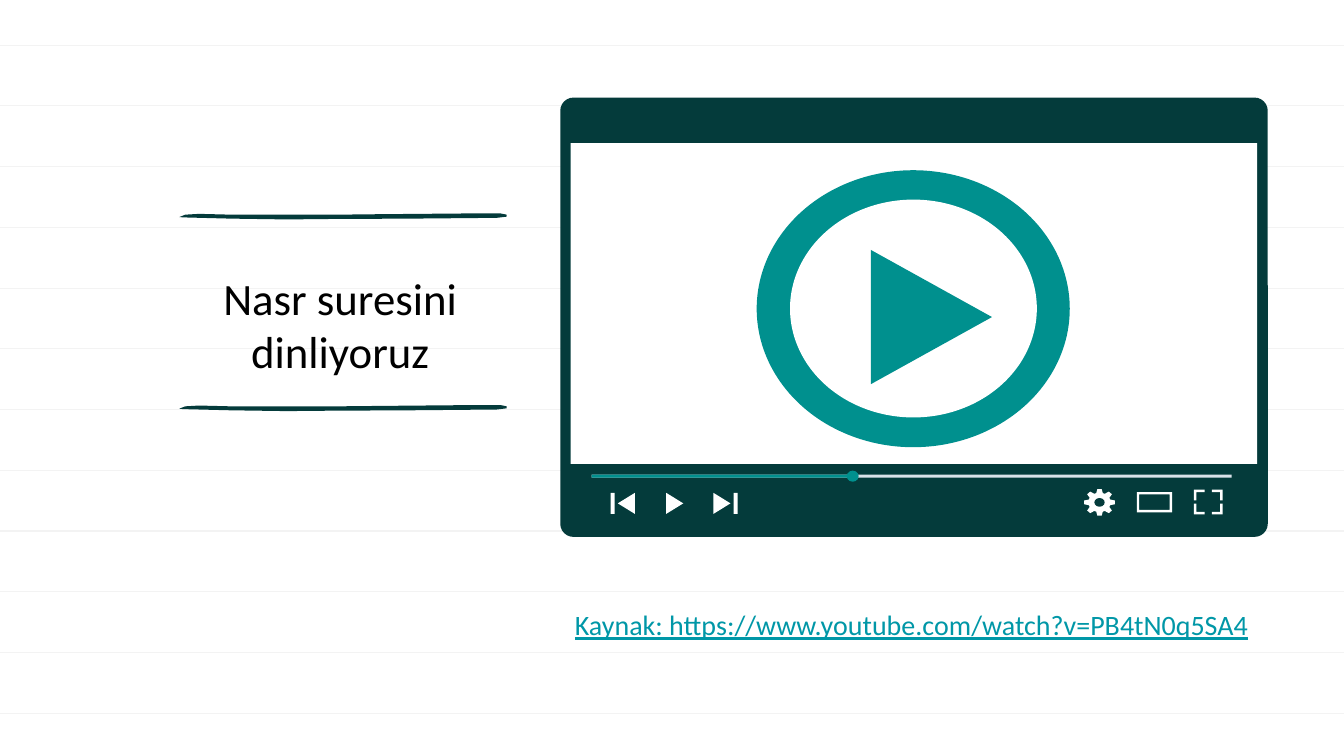
from dataclasses import dataclass
from math import cos, radians, sin

from lxml import etree
from pptx import Presentation
from pptx.dml.color import RGBColor
from pptx.enum.shapes import MSO_CONNECTOR, MSO_SHAPE
from pptx.enum.text import MSO_ANCHOR, MSO_AUTO_SIZE, PP_ALIGN
from pptx.oxml.ns import qn
from pptx.util import Cm, Pt

RECTANGLE = MSO_SHAPE.RECTANGLE
ROUNDED = MSO_SHAPE.ROUNDED_RECTANGLE
OVAL = MSO_SHAPE.OVAL
FRAME = MSO_SHAPE.FRAME
STRAIGHT = MSO_CONNECTOR.STRAIGHT
CENTER = PP_ALIGN.CENTER
TOP = MSO_ANCHOR.TOP
NO_AUTOFIT = MSO_AUTO_SIZE.NONE

TITLE_ONLY = 5
SLIDE_WIDTH, SLIDE_HEIGHT = 33.87, 19.05


@dataclass(frozen=True)
class Theme:
    font: str = "Calibri"
    title_size: int = 32
    source_size: int = 20
    text: str = "000000"
    link: str = "0097A7"
    paper_line: str = "F3F3F3"
    dark: str = "043B3B"
    accent: str = "00908E"
    track: str = "D9E2E9"
    white: str = "FFFFFF"


class SlideBuilder:
    """Draws on one slide; all positions and sizes are in centimetres."""

    def __init__(self, slide, theme):
        self.slide = slide
        self.theme = theme
        self.shapes = slide.shapes

    def start_group(self):
        group = self.slide.shapes.add_group_shape()
        self.shapes = group.shapes
        return group

    def end_group(self):
        self.shapes = self.slide.shapes

    def paint(self, shape, color):
        shape.shadow.inherit = False
        shape.fill.solid()
        shape.fill.fore_color.rgb = RGBColor.from_string(color)
        shape.line.fill.background()

    def preset(self, kind, left, top, width, height, color, adjustment=None):
        shape = self.shapes.add_shape(kind, Cm(left), Cm(top), Cm(width), Cm(height))
        if adjustment is not None:
            shape.adjustments[0] = adjustment
        self.paint(shape, color)

    def outline(self, points, color):
        """Fill the closed polygon through the given points."""
        start, *rest = [(Cm(x), Cm(y)) for x, y in points]
        builder = self.shapes.build_freeform(*start)
        builder.add_line_segments(rest, close=True)
        self.paint(builder.convert_to_shape(), color)

    def triangle(self, base, top, width, height, color):
        """Vertical base at x = base; a negative width points to the left."""
        tip = (base + width, top + height / 2)
        self.outline([(base, top), (base, top + height), tip], color)

    def horizontal_line(self, y, color):
        line = self.shapes.add_connector(STRAIGHT, 0, Cm(y), Cm(SLIDE_WIDTH), Cm(y))
        line.line.color.rgb = RGBColor.from_string(color)
        line.line.width = Pt(0.75)
        etree.SubElement(line._element.spPr, qn("a:effectLst"))

    def fill_text(self, shape, box, text, size, color, underline=False, spacing=1.0):
        shape.left, shape.top, shape.width, shape.height = map(Cm, box)
        frame = shape.text_frame
        frame.word_wrap = True
        frame.auto_size = NO_AUTOFIT
        frame.vertical_anchor = TOP
        frame.margin_left = frame.margin_right = Cm(0.33)
        frame.margin_top = frame.margin_bottom = Cm(0.33)
        paragraph = frame.paragraphs[0]
        paragraph.alignment = CENTER
        paragraph.line_spacing = spacing
        run = paragraph.add_run()
        run.text = text
        run.font.name = self.theme.font
        run.font.size = Pt(size)
        run.font.underline = underline
        run.font.color.rgb = RGBColor.from_string(color)

    def title(self, box, text):
        self.fill_text(self.slide.shapes.title, box, text,
                       self.theme.title_size, self.theme.text)

    def source(self, box, text):
        shape = self.shapes.add_textbox(*map(Cm, box))
        self.fill_text(shape, box, text, self.theme.source_size, self.theme.link,
                       underline=True, spacing=1.15)

    def ruled_paper(self):
        group = self.start_group()
        for row in range(12):
            self.horizontal_line(1.14 + row * 1.53, self.theme.paper_line)
        self.end_group()
        self.slide.shapes.element.insert(2, group.element)

    def brush_stroke(self, left, top):
        profile = [(0, .09), (.15, .03), (.5, .01), (1.3, .03), (4, .03), (5, .02),
                   (7.2, 0), (8.1, 0), (8.25, .03), (8.25, .08), (8, .11),
                   (5.8, .13), (3.8, .14), (2.7, .15), (1.3, .13), (.1, .1)]
        self.outline([(left + x, top + y) for x, y in profile], self.theme.dark)

    def gear(self, x, y, radius_x, radius_y):
        points = []
        for tooth in range(8):
            for offset, scale in ((-17, 0.72), (-8, 1), (8, 1), (17, 0.72)):
                angle = radians(tooth * 45 + offset)
                points.append((x + radius_x * scale * cos(angle),
                               y + radius_y * scale * sin(angle)))
        self.outline(points, self.theme.white)
        self.preset(OVAL, x - 0.13, y - 0.11, 0.26, 0.22, self.theme.dark)

    def full_screen_corners(self, x, y, half_width, half_height):
        arm, thickness = 0.27, 0.06
        corner = [(0, 0), (arm, 0), (arm, thickness), (thickness, thickness),
                  (thickness, arm), (0, arm)]
        for side_x in (-1, 1):
            for side_y in (-1, 1):
                self.outline([(x + side_x * (half_width - across),
                               y + side_y * (half_height - down))
                              for across, down in corner], self.theme.white)

    def player_controls(self):
        white = self.theme.white
        top, width, height = 12.42, 0.43, 0.53
        self.preset(RECTANGLE, 15.39, top, 0.1, height, white)
        self.triangle(16, top, -width, height, white)
        self.triangle(16.79, top, width, height, white)
        self.triangle(17.98, top, width, height, white)
        self.preset(RECTANGLE, 18.49, top, 0.1, height, white)
        self.gear(27.71, 12.66, 0.39, 0.34)
        self.preset(FRAME, 28.65, 12.4, 0.89, 0.51, white, 0.12)
        self.full_screen_corners(30.45, 12.65, 0.36, 0.31)

    def video_player(self):
        theme = self.theme
        self.start_group()
        self.preset(ROUNDED, 14.12, 2.46, 17.83, 11.07, theme.dark, 0.03)
        self.preset(RECTANGLE, 14.38, 3.61, 17.3, 8.08, theme.white)
        self.preset(OVAL, 19.07, 4.29, 7.89, 6.98, theme.accent)
        self.preset(OVAL, 19.91, 5.03, 6.22, 5.49, theme.white)
        self.triangle(21.95, 6.3, 3.05, 3.38, theme.accent)
        self.preset(RECTANGLE, 14.91, 11.96, 16.13, 0.08, theme.track)
        self.preset(RECTANGLE, 14.91, 11.96, 6.58, 0.08, theme.accent)
        self.preset(OVAL, 21.34, 11.86, 0.3, 0.28, theme.accent)
        self.player_controls()
        self.end_group()


def main():
    presentation = Presentation()
    presentation.slide_width = Cm(SLIDE_WIDTH)
    presentation.slide_height = Cm(SLIDE_HEIGHT)
    slide = presentation.slides.add_slide(presentation.slide_layouts[TITLE_ONLY])

    builder = SlideBuilder(slide, Theme())
    builder.ruled_paper()
    builder.title((4.04, 6.48, 9.07, 2.95), "Nasr suresini dinliyoruz")
    for top in (5.38, 10.21):
        builder.brush_stroke(4.52, top)
    builder.source((13.74, 14.86, 18.47, 1.17),
                   "Kaynak: https://www.youtube.com/watch?v=PB4tN0q5SA4")
    builder.video_player()

    presentation.save("out.pptx")


if __name__ == "__main__":
    main()
